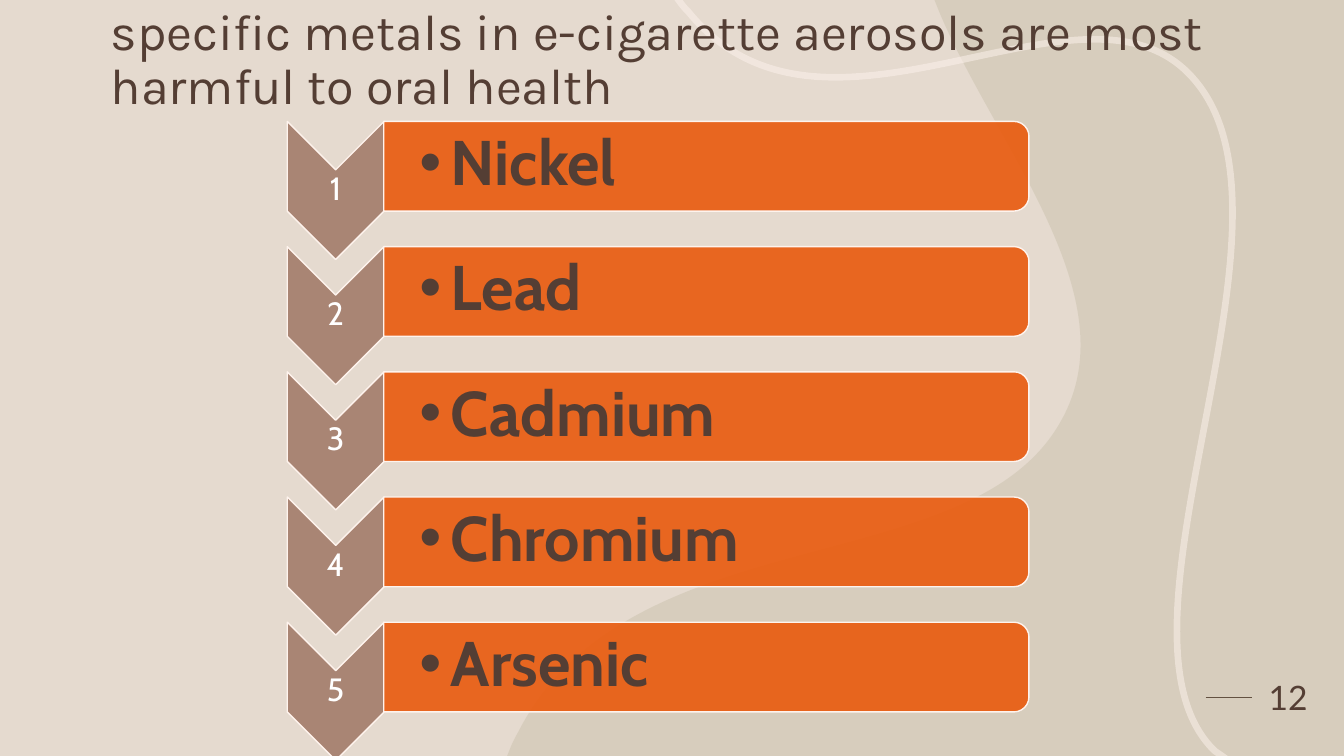
from dataclasses import dataclass

from lxml.etree import SubElement
from pptx import Presentation
from pptx.dml.color import RGBColor
from pptx.enum.shapes import MSO_CONNECTOR as Connector, MSO_SHAPE as Preset
from pptx.enum.text import MSO_ANCHOR as Anchor, PP_ALIGN as Align
from pptx.oxml.ns import qn
from pptx.util import Cm, Pt

SAND = RGBColor(0xE5, 0xDA, 0xCF)
BROWN = RGBColor(0x54, 0x3E, 0x34)
OLIVE = RGBColor(0xA0, 0x9D, 0x79)
CREAM = RGBColor(0xFE, 0xF3, 0xED)
CLAY = RGBColor(0xA9, 0x85, 0x74)
ORANGE = RGBColor(0xE9, 0x5A, 0x0D)
WHITE = RGBColor(0xFF, 0xFF, 0xFF)

Point = tuple[float, float]


@dataclass(frozen=True)
class Frame:
    left: float
    top: float
    width: float
    height: float

    def lengths(self, drop: float = 0) -> tuple[Cm, Cm, Cm, Cm]:
        return Cm(self.left), Cm(self.top + drop), Cm(self.width), Cm(self.height)


@dataclass(frozen=True)
class Segment:
    end: Point
    handles: tuple[Point, ...] = ()


CHEVRON = Frame(6.72, 3.58, 3.48, 2.44)
RANK = Frame(7.24, 4.27, 2.44, 1.04)
BAR = Frame(16.67, -3.94, 2.26, 16.26)
METAL = Frame(9.68, 3.15, 16.15, 2.03)
TITLE = Frame(2.54, 0.51, 28.78, 2.54)
PAGE_NUMBER = Frame(31.55, 16.33, 1.83, 2.49)

METALS = ["Nickel", "Lead", "Cadmium", "Chromium", "Arsenic"]
ROW_PITCH = 12.62 / (len(METALS) - 1)

BLOB = [
    Segment((23.55, 0)),
    Segment((33.87, 0)),
    Segment((33.87, 19.05)),
    Segment((12.78, 19.05)),
    Segment((12.88, 18.8)),
    Segment((13.13, 18.31), ((12.98, 18.57), (13.08, 18.42))),
    Segment((26.72, 10.64), ((16.03, 13), (24.43, 14.68))),
    Segment((23.67, 0.3), ((28.52, 7.52), (25.1, 3.71))),
]
RIBBON = [
    Segment((30.91, 19.13)),
    Segment((30.84, 19.08)),
    Segment((30.61, 18.92)),
    Segment((30.1, 2.01), ((27.53, 15.93), (33.2, 5.59))),
    Segment((17.35, 0.3), ((27.38, -1.19), (20.83, 4.57))),
    Segment((17.04, -0.08), ((17.27, 0.23), (17.17, 0.1))),
]


def add_outline(page, segments: list[Segment], close: bool):
    ends = [(Cm(x), Cm(y)) for x, y in (segment.end for segment in segments)]
    builder = page.shapes.build_freeform(*ends[0], scale=1.0)
    builder.add_line_segments(ends[1:], close=close)
    shape = builder.convert_to_shape()
    shape.shadow.inherit = False
    lines = list(shape._element.iter(qn("a:lnTo")))
    for line, segment in zip(lines, segments[1:]):
        if segment.handles:
            line.tag = qn("a:cubicBezTo")
            for index, (x, y) in enumerate(segment.handles):
                handle = SubElement(line, qn("a:pt"), x=str(Cm(x) - shape.left),
                                    y=str(Cm(y) - shape.top))
                line.insert(index, handle)
    return shape


def paint(fill, color: RGBColor, opacity: int = 100) -> None:
    fill.solid()
    fill.fore_color.rgb = color
    if opacity < 100:
        shade = fill._xPr.find(qn("a:solidFill"))[0]
        SubElement(shade, qn("a:alpha"), val=str(opacity * 1000))


def add_turned(page, preset: Preset, frame: Frame, drop: float,
               color: RGBColor, opacity: int = 100) -> None:
    shape = page.shapes.add_shape(preset, *frame.lengths(drop))
    shape.rotation = 90
    shape.shadow.inherit = False
    paint(shape.fill, color, opacity)
    paint(shape.line.fill, CREAM)
    shape.line.width = Pt(1)


def add_text(page, text: str, frame: Frame, *, font: str, size: float,
             color: RGBColor = BROWN, drop: float = 0, bold: bool = False,
             align: Align = Align.LEFT, anchor: Anchor = Anchor.MIDDLE,
             spacing: float = 0.9, insets: tuple = (0.25, 0.13, 0.25, 0.13),
             bullet: bool = False) -> None:
    box = page.shapes.add_textbox(*frame.lengths(drop)).text_frame
    box.word_wrap = True
    box.vertical_anchor = anchor
    box.margin_left, box.margin_top, box.margin_right, box.margin_bottom = map(Cm, insets)
    para = box.paragraphs[0]
    para.alignment = align
    para.line_spacing = spacing
    if bullet:
        para.level = 1
        properties = para._p.get_or_add_pPr()
        properties.set("marL", str(Cm(0.79)))
        properties.set("indent", str(-Cm(0.79)))
        SubElement(properties, qn("a:buFont"), typeface="Arial")
        SubElement(properties, qn("a:buChar"), char="•")
    span = para.add_run()
    span.text = text
    span.font.name = font
    span.font.size = Pt(size)
    span.font.bold = bold
    span.font.color.rgb = color


def add_backdrop(page) -> None:
    paint(page.background.fill, SAND)
    rule = page.shapes.add_connector(
        Connector.STRAIGHT, Cm(30.38), Cm(17.58), Cm(31.55), Cm(17.58))
    paint(rule.line.fill, BROWN)
    rule.line.width = Pt(1.25)
    SubElement(rule._element.spPr, qn("a:effectLst"))
    blob = add_outline(page, BLOB, close=True)
    paint(blob.fill, OLIVE, 20)
    blob.line.fill.background()
    ribbon = add_outline(page, RIBBON, close=False)
    ribbon.fill.background()
    paint(ribbon.line.fill, CREAM, 50)
    ribbon.line.width = Pt(4.75)


def add_metal(page, rank: int, metal: str) -> None:
    drop = (rank - 1) * ROW_PITCH
    add_turned(page, Preset.CHEVRON, CHEVRON, drop, CLAY)
    add_text(page, str(rank), RANK, drop=drop, font="Cabin", size=23, color=WHITE,
             align=Align.CENTER, insets=(0.05, 0.05, 0.05, 0.05))
    add_turned(page, Preset.ROUND_2_SAME_RECTANGLE, BAR, drop, ORANGE, 90)
    add_text(page, metal, METAL, drop=drop, font="Cabin", size=45, bold=True,
             bullet=True, insets=(0.89, 0.08, 0.08, 0.08))


def main() -> None:
    deck = Presentation()
    deck.slide_width, deck.slide_height = Cm(33.87), Cm(19.05)
    page = deck.slides.add_slide(deck.slide_layouts[6])
    add_backdrop(page)
    add_text(page, "specific metals in e-cigarette aerosols are most harmful to oral health",
             TITLE, font="Karla", size=36, anchor=Anchor.BOTTOM)
    for rank, metal in enumerate(METALS, start=1):
        add_metal(page, rank, metal)
    add_text(page, "12", PAGE_NUMBER, font="Lato", size=24, align=Align.CENTER, spacing=1.0)
    deck.save("out.pptx")


if __name__ == "__main__":
    main()
